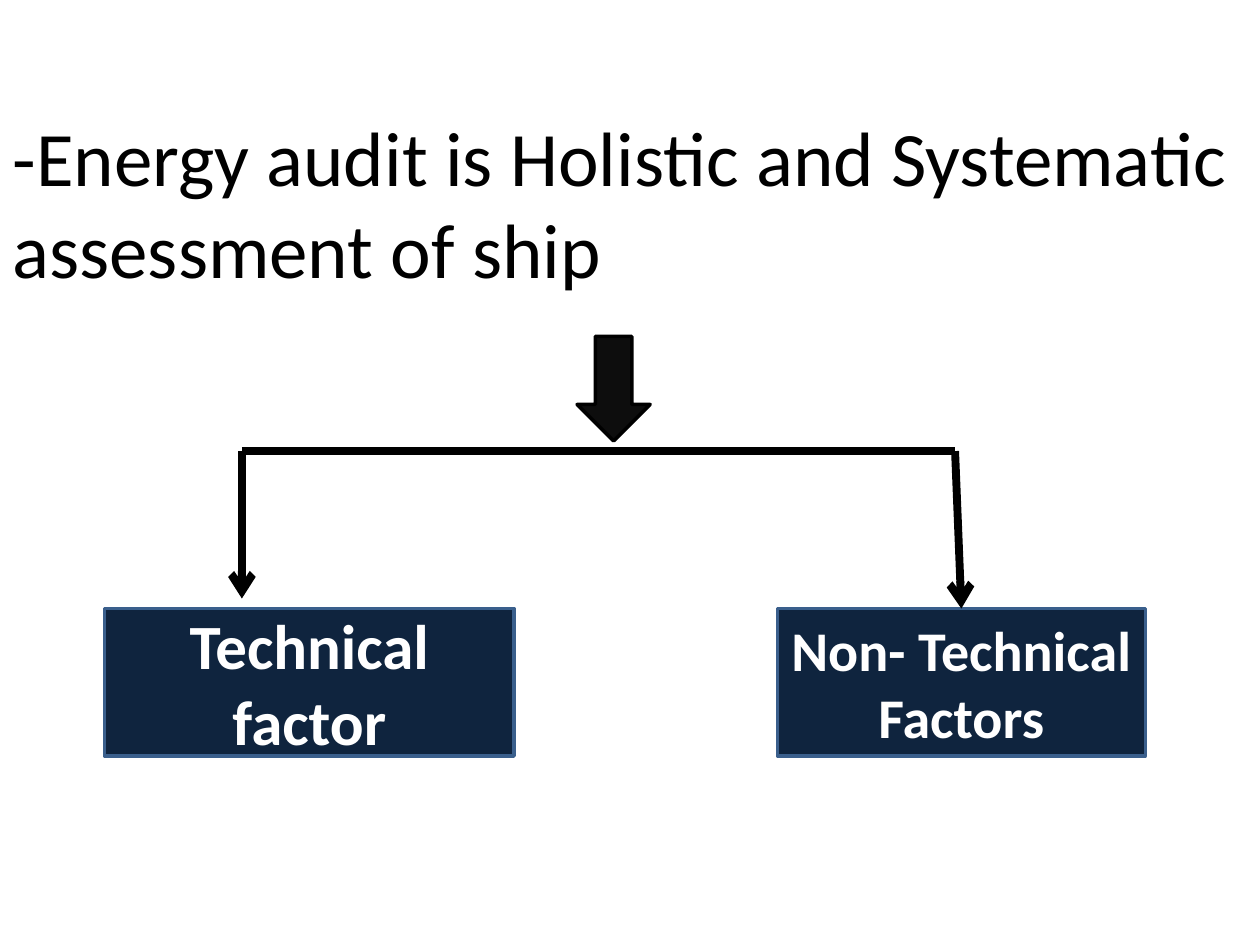
import pptx
import pptx.util
import pptx.dml.color
import pptx.enum.shapes
import pptx.enum.text
import pptx.oxml.ns
from lxml import etree

Inches, Pt = pptx.util.Inches, pptx.util.Pt
RGBColor = pptx.dml.color.RGBColor
Shape = pptx.enum.shapes.MSO_SHAPE
Anchor = pptx.enum.text.MSO_ANCHOR
Align = pptx.enum.text.PP_ALIGN
qn = pptx.oxml.ns.qn

# Content
TITLE = "-Energy audit is Holistic and Systematic assessment of ship"
FACTORS = [  # text, size, left, width
    ("Technical factor", 36, 0.83, 3.25),
    ("Non- Technical Factors", 32, 6.17, 2.92),
]

# Layout in inches
FACTOR_TOP, FACTOR_HEIGHT = 4.83, 1.17
BRANCH_LEFT, BRANCH_RIGHT, BRANCH_TOP = 1.92, 7.58, 3.58

BLACK = RGBColor(0, 0, 0)
WHITE = RGBColor(255, 255, 255)
NAVY = RGBColor(0x0F, 0x24, 0x3E)
BLUE = RGBColor(0x3A, 0x5F, 0x8C)
CHARCOAL = RGBColor(0x0D, 0x0D, 0x0D)


def write(frame, text, size, color, align, bold=False):
    frame.word_wrap = True
    para = frame.paragraphs[0]
    para.alignment = align
    para.space_before = Pt(0)
    span = para.add_run()
    span.text = text
    span.font.name = "Calibri"
    span.font.size = Pt(size)
    span.font.bold = bold
    span.font.color.rgb = color


def add_block(page, kind, left, top, width, height, fill, line):
    block = page.shapes.add_shape(
        kind, Inches(left), Inches(top), Inches(width), Inches(height))
    block.shadow.inherit = False
    block.fill.solid()
    block.fill.fore_color.rgb = fill
    block.line.color.rgb = line
    block.line.width = Pt(2)
    return block


def add_line(page, start, end, arrow=False):
    line = page.shapes.add_connector(
        pptx.enum.shapes.MSO_CONNECTOR.STRAIGHT,
        *[Inches(value) for value in start + end])
    line.line.color.rgb = BLACK
    line.line.width = Pt(4.5)
    if arrow:
        etree.SubElement(line.line._get_or_add_ln(), qn("a:tailEnd"), type="arrow")
    etree.SubElement(line._element.spPr, qn("a:effectLst"))
    return line


def main():
    deck = pptx.Presentation()
    deck.slide_width, deck.slide_height = Inches(10), Inches(7.5)
    page = deck.slides.add_slide(deck.slide_layouts[5])

    # Title fills the page, with its text near the top
    title = page.shapes.title
    title.left = title.top = 0
    title.width, title.height = deck.slide_width, deck.slide_height
    frame = title.text_frame
    frame.auto_size = pptx.enum.text.MSO_AUTO_SIZE.NONE
    frame.vertical_anchor = Anchor.TOP
    frame.margin_top = Inches(0.87)
    write(frame, TITLE, 44, BLACK, Align.LEFT)

    # Factor boxes
    boxes = []
    for text, size, left, width in FACTORS:
        box = add_block(page, Shape.FLOWCHART_PROCESS, left, FACTOR_TOP,
                        width, FACTOR_HEIGHT, NAVY, BLUE)
        box.text_frame.vertical_anchor = Anchor.MIDDLE
        write(box.text_frame, text, size, WHITE, Align.CENTER, bold=True)
        boxes.append(box)

    # Branch from the title to the factors
    left_corner = (BRANCH_LEFT, BRANCH_TOP)
    right_corner = (BRANCH_RIGHT, BRANCH_TOP)
    add_line(page, left_corner, (BRANCH_LEFT, 4.75), arrow=True)
    add_line(page, left_corner, right_corner)
    add_block(page, Shape.DOWN_ARROW, 4.58, 2.67, 0.58, 0.83, CHARCOAL, BLACK)
    right_arrow = add_line(page, right_corner, (7.63, FACTOR_TOP), arrow=True)
    right_arrow.end_connect(boxes[1], 0)

    deck.save("out.pptx")


if __name__ == "__main__":
    main()
